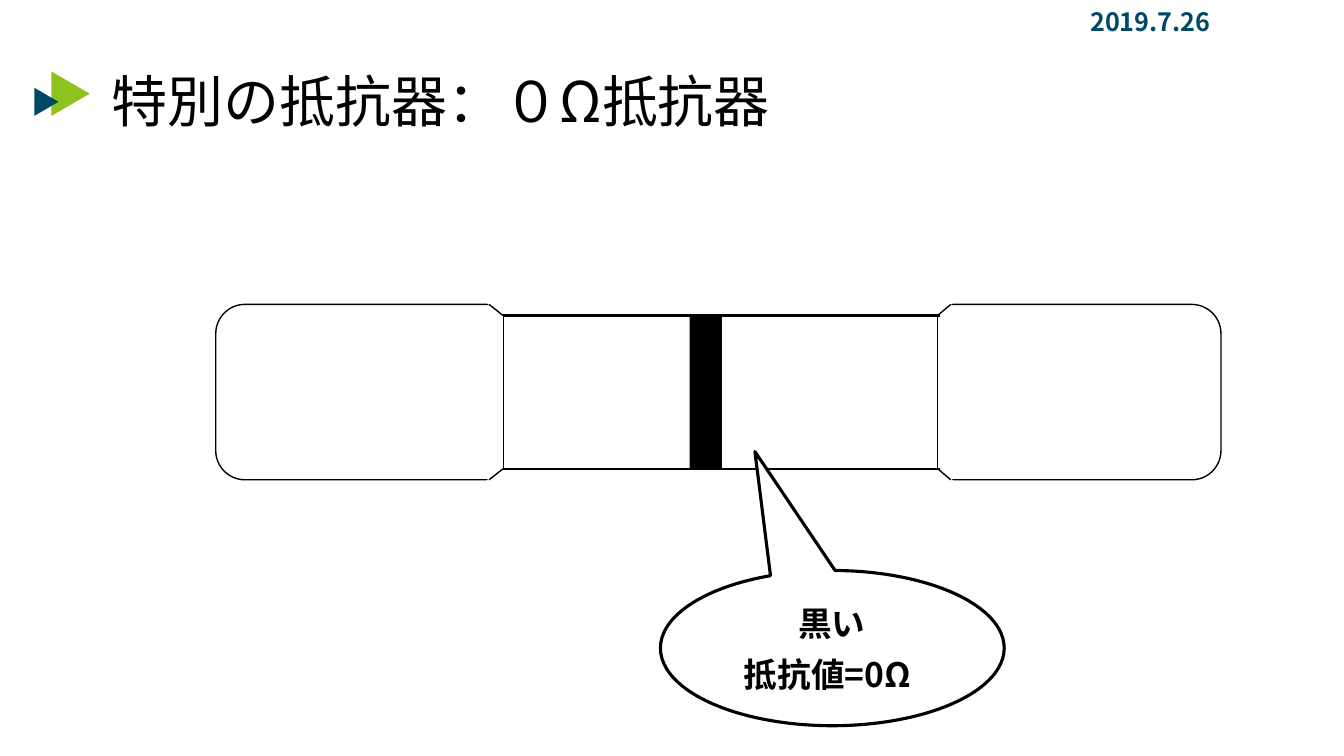
from lxml import etree
from pptx import Presentation
from pptx import util as u
from pptx.dml import color
from pptx.enum import shapes, text
from pptx.oxml import ns

COLORS = {"black": "000000", "white": "FFFFFF", "green": "8EC31F", "navy": "004966"}
CJK = "Noto Sans CJK SC"


def rgb(name):
    return color.RGBColor.from_string(COLORS[name])


def write(shape, runs, size, font_color="black", bold=False, align=text.PP_ALIGN.LEFT,
          anchor=text.MSO_ANCHOR.TOP, wrap=True, line_spacing=None,
          auto_size=text.MSO_AUTO_SIZE.NONE):
    """Fill a shape with one paragraph made of (text, font) runs."""
    frame = shape.text_frame
    frame.word_wrap = wrap
    frame.auto_size = auto_size
    frame.vertical_anchor = anchor
    paragraph = frame.paragraphs[0]
    paragraph.alignment = align
    paragraph.line_spacing = line_spacing
    paragraph.space_before = u.Pt(0)
    properties = paragraph._p.get_or_add_pPr()
    properties.set("marL", "0")
    properties.set("indent", "0")
    etree.SubElement(properties, ns.qn("a:buNone"))
    for words, font_name in runs:
        run = paragraph.add_run()
        run.text = words
        run.font.size = u.Pt(size)
        run.font.bold = bold
        run.font.name = font_name
        run.font.color.rgb = rgb(font_color)
        east_asian = etree.SubElement(run._r.get_or_add_rPr(), ns.qn("a:ea"))
        east_asian.set("typeface", CJK)


class SlideBuilder:
    def __init__(self, presentation):
        self.slide = presentation.slides.add_slide(presentation.slide_layouts[1])

    def placeholder(self, index, box, runs, size, **style):
        shape = self.slide.placeholders[index]
        shape.left, shape.top, shape.width, shape.height = map(u.Inches, box)
        write(shape, runs, size, **style)

    def shape(self, kind, box, fill, line_width=None, rotation=0, adjustments=()):
        shape = self.slide.shapes.add_shape(kind, *map(u.Inches, box))
        shape.shadow.inherit = False
        shape.rotation = rotation
        shape.fill.solid()
        shape.fill.fore_color.rgb = rgb(fill)
        if line_width:
            shape.line.color.rgb = rgb("black")
            shape.line.width = u.Pt(line_width)
        else:
            shape.line.fill.background()
        for index, value in enumerate(adjustments):
            shape.adjustments[index] = value

    def line(self, start, end, width):
        connector = self.slide.shapes.add_connector(
            shapes.MSO_CONNECTOR.STRAIGHT, *map(u.Inches, (*start, *end)))
        connector.line.color.rgb = rgb("black")
        connector.line.width = u.Pt(width)
        etree.SubElement(connector._element.spPr, ns.qn("a:effectLst"))

    def label(self, box, words):
        shape = self.slide.shapes.add_textbox(*map(u.Inches, box))
        write(shape, [(words, CJK)], 24, bold=True, wrap=False,
              auto_size=text.MSO_AUTO_SIZE.SHAPE_TO_FIT_TEXT)


def main():
    presentation = Presentation()
    presentation.slide_width = u.Inches(13.33)
    presentation.slide_height = u.Inches(7.5)
    builder = SlideBuilder(presentation)
    kinds = shapes.MSO_SHAPE

    # Title marker, title and date
    builder.shape(kinds.ISOSCELES_TRIANGLE, (0.48, 0.74, 0.44, 0.38), "green", rotation=90)
    builder.shape(kinds.ISOSCELES_TRIANGLE, (0.32, 0.89, 0.28, 0.24), "navy", rotation=90)
    builder.placeholder(0, (1.01, 0.46, 8.76, 0.93),
                        [("特別の抵抗器：０", "Calibri"), ("Ω抵抗器", CJK)], 40,
                        anchor=text.MSO_ANCHOR.BOTTOM, line_spacing=0.9)
    builder.placeholder(1, (9.49, 0.05, 3.84, 0.41), [("2019.7.26", CJK)], 18,
                        font_color="navy", bold=True, align=text.PP_ALIGN.CENTER,
                        line_spacing=0.9)

    # Resistor body, with white notches that narrow its middle
    builder.shape(kinds.ROUNDED_RECTANGLE, (2.14, 3.02, 9.97, 1.74), "white", 1)
    for notch_top, rotation in ((2.86, 180), (4.65, 0)):
        builder.shape(kinds.SNIP_2_SAME_RECTANGLE, (4.82, notch_top, 4.64, 0.26), "white",
                      rotation=rotation, adjustments=(0.473, 0))

    # Waist edges and the slanted shoulders
    left, right = 4.99, 9.3
    for waist, rim in ((3.13, 3.02), (4.65, 4.76)):
        builder.line((left, waist), (right + 0.02, waist), 1.5)
        builder.line((left, waist), (left - 0.14, rim), 1)
        builder.line((right, waist), (right + 0.13, rim), 1)

    # Black band and end-cap borders
    builder.shape(kinds.RECTANGLE, (6.84, 3.13, 0.32, 1.52), "black")
    for border in (left, right):
        builder.line((border, 3.13), (border, 4.65), 0.5)

    # Callout
    builder.shape(kinds.OVAL_CALLOUT, (6.55, 5.66, 3.41, 1.54), "white", 2.25,
                  adjustments=(-0.225, -1.266))
    builder.label((7.28, 6.44, 1.95, 0.5), "抵抗値=0Ω")
    builder.label((7.82, 5.93, 0.88, 0.5), "黒い")

    presentation.save("out.pptx")


if __name__ == "__main__":
    main()
